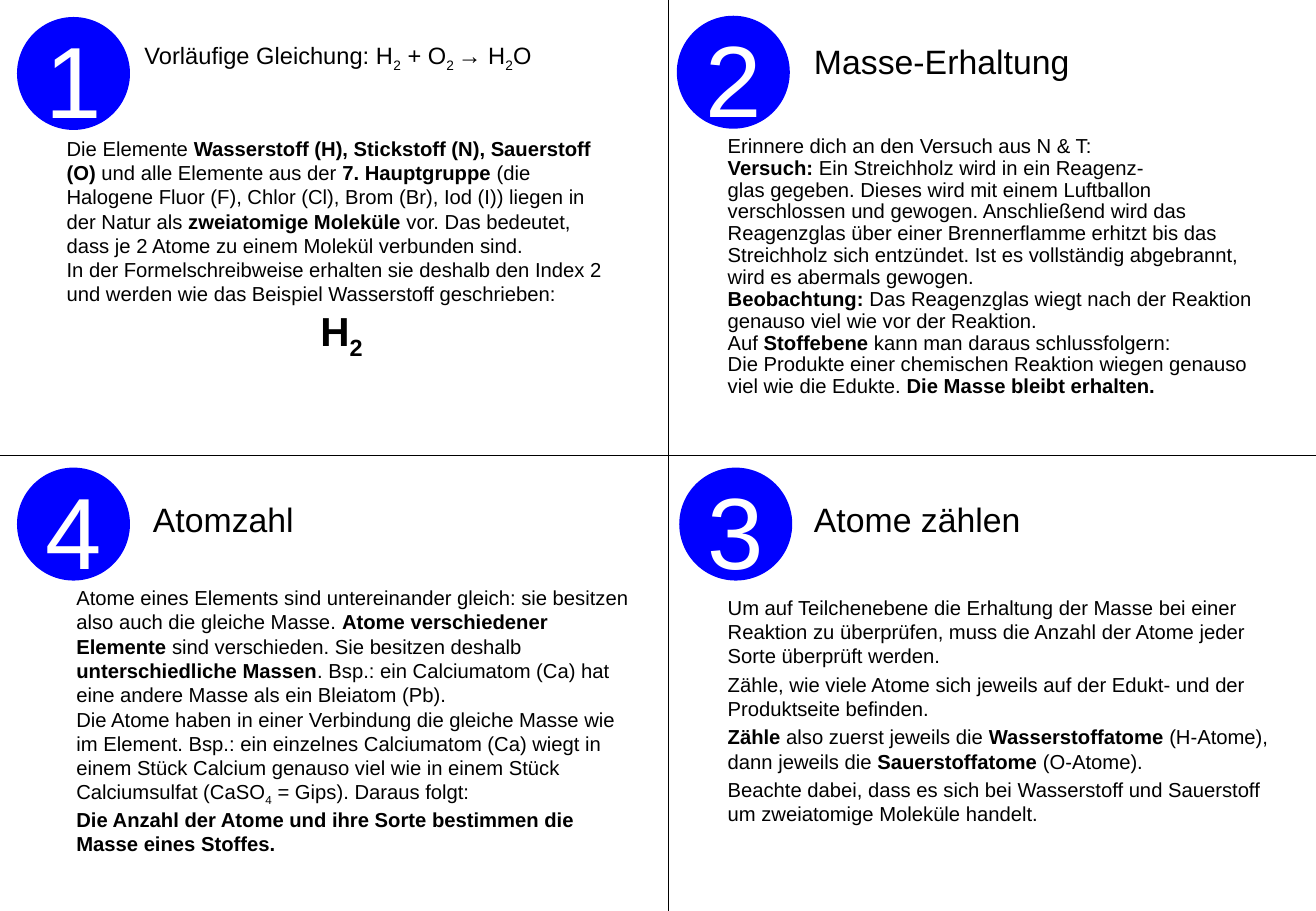
from dataclasses import dataclass

from lxml import etree
from pptx import Presentation
from pptx.dml.color import RGBColor
from pptx.enum.shapes import MSO_CONNECTOR, MSO_SHAPE
from pptx.enum.text import MSO_ANCHOR, PP_ALIGN
from pptx.oxml.ns import qn
from pptx.util import Emu, Pt

PX = 9144  # 100 px to the inch
SLIDE_WIDTH, SLIDE_HEIGHT = 1083, 750
MIDDLE_X, MIDDLE_Y = 550, 375
BADGE_SIZE = 93
BODY_WIDTH, BODY_HEIGHT = 472, 236
TITLE_HEIGHT = 39
FONT = "Arial"
BLACK, WHITE, BLUE = "000000", "FFFFFF", "0000FF"


@dataclass
class Card:
    number: str
    badge_at: tuple
    title: str
    title_at: tuple
    body: list
    body_at: tuple
    formula: str = ""
    title_size: int = 20
    title_width: int = 315
    line_spacing: float = 1.0
    space_after: float = 0
    right_margin: int = 10


# *bold*, _subscript_, line feed = line break
CARDS = [
    Card(
        "1", (14, 14),
        "Vorläufige Gleichung: H_2_ + O_2 _→ H_2_O", (109, 29),
        [
            "Die Elemente *Wasserstoff (H), Stickstoff (N), Sauerstoff (O)* und alle "
            "Elemente aus der *7. Hauptgruppe* (die Halogene Fluor (F), Chlor (Cl), "
            "Brom (Br), Iod (I)) liegen in der Natur als *zweiatomige Moleküle* vor. "
            "Das bedeutet, dass je 2 Atome zu einem Molekül verbunden sind.",
            "In der Formelschreibweise erhalten sie deshalb den Index 2 und werden "
            "wie das Beispiel Wasserstoff geschrieben:",
        ],
        (45, 107), formula="*H_2_*", title_size=14, title_width=378,
    ),
    Card(
        "2", (557, 13), "Masse-Erhaltung", (660, 29),
        [
            "Erinnere dich an den Versuch aus N & T:",
            "*Versuch:* Ein Streichholz wird in ein Reagenz-",
            "glas gegeben. Dieses wird mit einem Luftballon\nverschlossen und gewogen. "
            "Anschließend wird das Reagenzglas über einer Brennerflamme erhitzt bis "
            "das Streichholz sich entzündet. Ist es vollständig abgebrannt, wird es "
            "abermals gewogen.",
            "*Beobachtung:* Das Reagenzglas wiegt nach der Reaktion genauso viel wie "
            "vor der Reaktion.",
            "Auf *Stoffebene* kann man daraus schlussfolgern:",
            "Die Produkte einer chemischen Reaktion wiegen genauso viel wie die "
            "Edukte. *Die Masse bleibt erhalten.*",
        ],
        (589, 107), line_spacing=0.9,
    ),
    Card(
        "4", (14, 385), "Atomzahl", (116, 406),
        [
            "Atome eines Elements sind untereinander gleich: sie besitzen also auch "
            "die gleiche Masse. *Atome verschiedener Elemente *sind verschieden. Sie "
            "besitzen deshalb *unterschiedliche Massen*. Bsp.: ein Calciumatom (Ca) "
            "hat eine andere Masse als ein Bleiatom (Pb).",
            "Die Atome haben in einer Verbindung die gleiche Masse wie im Element. "
            "Bsp.: ein einzelnes Calciumatom (Ca) wiegt in einem Stück Calcium genauso "
            "viel wie in einem Stück Calciumsulfat (CaSO_4_ = Gips). Daraus folgt:",
            "*Die Anzahl der Atome und ihre Sorte bestimmen die Masse eines Stoffes.*",
        ],
        (53, 477), right_margin=0,
    ),
    Card(
        "3", (559, 385), "Atome zählen", (660, 406),
        [
            "Um auf Teilchenebene die Erhaltung der Masse bei einer Reaktion zu "
            "überprüfen, muss die Anzahl der Atome jeder Sorte überprüft werden.",
            "Zähle, wie viele Atome sich jeweils auf der Edukt- und der Produktseite "
            "befinden.",
            "*Zähle* also zuerst jeweils die* Wasserstoffatome *(H-Atome), dann "
            "jeweils die* Sauerstoffatome *(O-Atome).",
            "Beachte dabei, dass es sich bei Wasserstoff und Sauerstoff um "
            "zweiatomige Moleküle handelt.",
        ],
        (589, 485), space_after=2.4,
    ),
]


def px(length):
    return Emu(length * PX)


def color(hex_code):
    return RGBColor.from_string(hex_code)


def add_divider(slide, x1, y1, x2, y2):
    line = slide.shapes.add_connector(
        MSO_CONNECTOR.STRAIGHT, px(x1), px(y1), px(x2), px(y2))
    line.line.color.rgb = color(BLACK)
    line.line.width = Pt(0.75)
    etree.SubElement(line._element.spPr, qn("a:effectLst"))


def style_paragraph(paragraph, size, hex_code=BLACK, align=PP_ALIGN.LEFT):
    paragraph.alignment = align
    paragraph.font.name = FONT
    paragraph.font.size = Pt(size)
    paragraph.font.color.rgb = color(hex_code)


def write_markup(paragraph, markup):
    """Add runs for *bold* and _subscript_ parts and breaks for line feeds."""
    for i, weighted in enumerate(markup.split("*")):
        for j, part in enumerate(weighted.split("_")):
            for k, text in enumerate(part.split("\n")):
                if k:
                    paragraph.add_line_break()
                if not text:
                    continue
                run = paragraph.add_run()
                run.text = text
                if i % 2:
                    run.font.bold = True
                if j % 2:
                    run._r.get_or_add_rPr().set("baseline", "-25000")


def add_text_frame(slide, position, width, height):
    box = slide.shapes.add_textbox(*map(px, position), px(width), px(height))
    box.text_frame.word_wrap = True
    return box.text_frame


def add_badge(slide, card):
    badge = slide.shapes.add_shape(
        MSO_SHAPE.OVAL, *map(px, card.badge_at), px(BADGE_SIZE), px(BADGE_SIZE))
    badge.shadow.inherit = False
    badge.fill.solid()
    badge.fill.fore_color.rgb = color(BLUE)
    badge.line.fill.background()
    frame = badge.text_frame
    frame.vertical_anchor = MSO_ANCHOR.MIDDLE
    frame.margin_left = frame.margin_right = frame.margin_bottom = 0
    frame.margin_top = px(8)
    paragraph = frame.paragraphs[0]
    style_paragraph(paragraph, 60, WHITE, PP_ALIGN.CENTER)
    write_markup(paragraph, card.number)


def add_title(slide, card):
    frame = add_text_frame(slide, card.title_at, card.title_width, TITLE_HEIGHT)
    paragraph = frame.paragraphs[0]
    style_paragraph(paragraph, card.title_size)
    write_markup(paragraph, card.title)


def add_body(slide, card):
    frame = add_text_frame(slide, card.body_at, BODY_WIDTH, BODY_HEIGHT)
    frame.margin_right = px(card.right_margin)
    for index, markup in enumerate(card.body):
        paragraph = frame.add_paragraph() if index else frame.paragraphs[0]
        style_paragraph(paragraph, 12)
        paragraph.line_spacing = card.line_spacing
        paragraph.space_after = Pt(card.space_after)
        write_markup(paragraph, markup)
    if card.formula:
        paragraph = frame.add_paragraph()
        style_paragraph(paragraph, 24, align=PP_ALIGN.CENTER)
        write_markup(paragraph, card.formula)


def main():
    presentation = Presentation()
    presentation.slide_width = px(SLIDE_WIDTH)
    presentation.slide_height = px(SLIDE_HEIGHT)
    slide = presentation.slides.add_slide(presentation.slide_layouts[6])
    add_divider(slide, MIDDLE_X, 0, MIDDLE_X, SLIDE_HEIGHT)
    add_divider(slide, 0, MIDDLE_Y, SLIDE_WIDTH, MIDDLE_Y)
    for card in CARDS:
        add_title(slide, card)
        add_body(slide, card)
        add_badge(slide, card)
    presentation.save("out.pptx")


if __name__ == "__main__":
    main()
